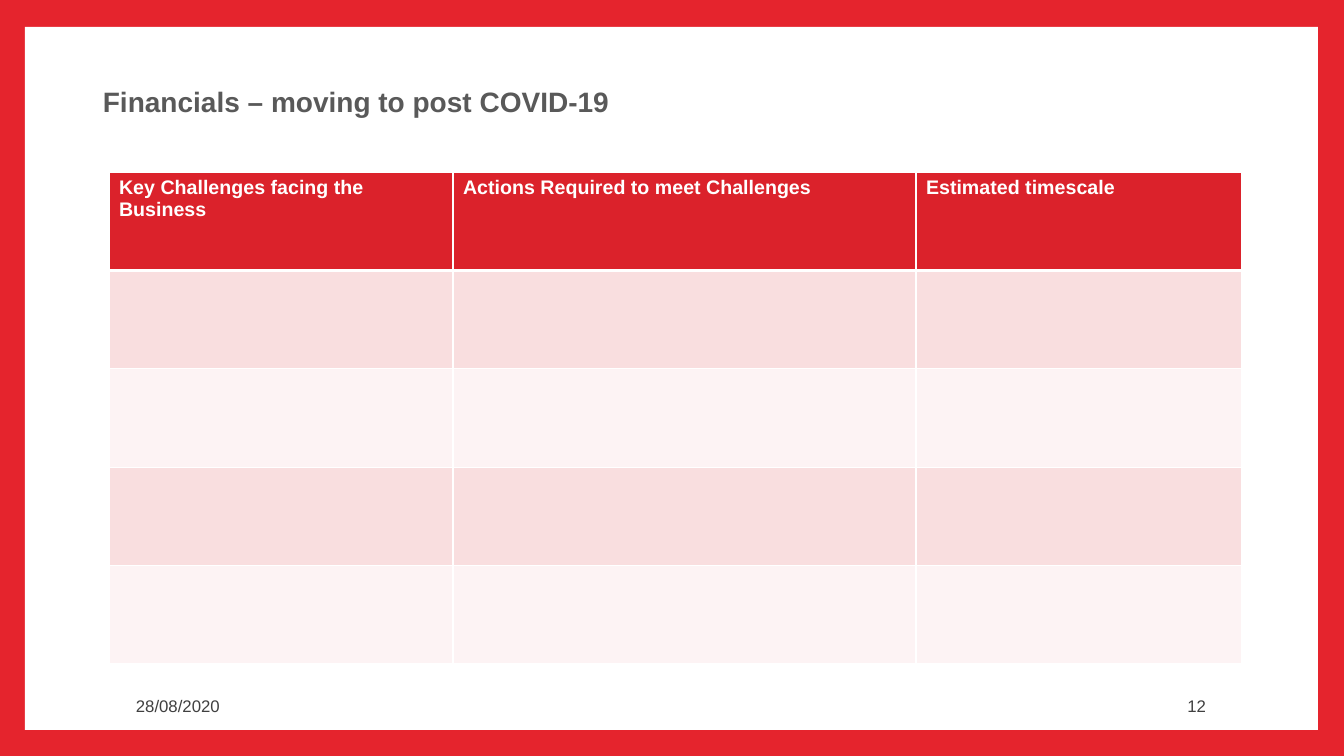
from lxml import etree
from pptx import Presentation
from pptx.dml.color import RGBColor
from pptx.enum.shapes import MSO_SHAPE
from pptx.enum.text import MSO_ANCHOR, PP_ALIGN
from pptx.oxml.ns import qn
from pptx.util import Pt

RECTANGLE = MSO_SHAPE.RECTANGLE
MIDDLE = MSO_ANCHOR.MIDDLE
LEFT, RIGHT = PP_ALIGN.LEFT, PP_ALIGN.RIGHT

FRAME_RED = RGBColor(0xE5, 0x24, 0x2D)
TABLE_RED = RGBColor(0xDB, 0x22, 0x2B)
WHITE = RGBColor(0xFF, 0xFF, 0xFF)
TITLE_GREY = RGBColor(0x59, 0x59, 0x59)
FOOTER_GREY = RGBColor(0x40, 0x40, 0x40)

EMU_PER_PX = 914400 / 100.8
BAND_OPACITY = (15, 5)  # percent, alternating down the body rows

TITLE_FORMAT = {"size": Pt(20), "bold": True, "color": TITLE_GREY}
HEADER_FORMAT = {"size": Pt(14), "bold": True, "color": WHITE}
FOOTER_FORMAT = {"size": Pt(12), "bold": False, "color": FOOTER_GREY}


def px(length):
    return round(length * EMU_PER_PX)


class SlideBuilder:
    font_name = "Arial"

    def __init__(self, slide):
        self.slide = slide

    def background(self, color):
        fill = self.slide.background.fill
        fill.solid()
        fill.fore_color.rgb = color

    def panel(self, box, color):
        panel = self.slide.shapes.add_shape(RECTANGLE, *map(px, box))
        panel.shadow.inherit = False
        panel.fill.solid()
        panel.fill.fore_color.rgb = color
        panel.line.fill.background()

    def styled_run(self, paragraph, text, text_format):
        run = paragraph.add_run()
        run.text = text
        run.font.name = self.font_name
        for attribute, value in text_format.items():
            if attribute == "color":
                run.font.color.rgb = value
            else:
                setattr(run.font, attribute, value)

    def text(self, box, text, text_format, align=LEFT, line_spacing=1.0):
        frame = self.slide.shapes.add_textbox(*map(px, box)).text_frame
        frame.word_wrap = True
        frame.vertical_anchor = MIDDLE
        paragraph = frame.paragraphs[0]
        paragraph.alignment = align
        paragraph.line_spacing = line_spacing
        self.styled_run(paragraph, text, text_format)

    def cell_style(self, cell, opacity, top, bottom):
        cell.fill.solid()
        cell.fill.fore_color.rgb = TABLE_RED
        properties = cell._tc.get_or_add_tcPr()
        if opacity < 100:
            color = properties.find(f"{qn('a:solidFill')}/{qn('a:srgbClr')}")
            etree.SubElement(color, qn("a:alpha"), val=str(opacity * 1000))
        # Borders come before the fill in the cell properties
        widths = {"a:lnL": 1, "a:lnR": 1, "a:lnT": top, "a:lnB": bottom}
        for position, (side, width) in enumerate(widths.items()):
            border = etree.Element(qn(side), w=str(Pt(width)))
            line_fill = etree.SubElement(border, qn("a:solidFill"))
            etree.SubElement(line_fill, qn("a:srgbClr"), val=str(WHITE))
            properties.insert(position, border)

    def table(self, box, column_widths, headings, row_count):
        table = self.slide.shapes.add_table(
            row_count, len(headings), *map(px, box)).table
        table.horz_banding = False
        for column, width in zip(table.columns, column_widths):
            column.width = px(width)
        for index, row in enumerate(table.rows):
            row.height = px(box[3] / row_count)
            opacity = BAND_OPACITY[(index - 1) % 2] if index else 100
            for cell in row.cells:
                self.cell_style(cell, opacity, top=3 if index == 1 else 1,
                                bottom=1 if index else 3)
        for cell, heading in zip(table.rows[0].cells, headings):
            self.styled_run(cell.text_frame.paragraphs[0], heading,
                            HEADER_FORMAT)


def main():
    presentation = Presentation()
    presentation.slide_width = px(1344)
    presentation.slide_height = px(756)
    blank_layout = presentation.slide_layouts[6]
    builder = SlideBuilder(presentation.slides.add_slide(blank_layout))

    # Red frame around a white page
    builder.background(FRAME_RED)
    builder.panel((25, 27, 1293, 703), WHITE)

    # Footer
    builder.text((126, 686, 257, 40), "28/08/2020", FOOTER_FORMAT)
    builder.text((1028, 686, 188, 40), "12", FOOTER_FORMAT, align=RIGHT)

    # Challenges table, with empty rows to fill in
    headings = ("Key Challenges facing the Business",
                "Actions Required to meet Challenges",
                "Estimated timescale")
    builder.table((109, 172, 1133, 492), (344, 463, 326), headings, 5)

    # Title
    builder.text((93, 67, 1089, 72), "Financials – moving to post COVID-19",
                 TITLE_FORMAT, line_spacing=0.9)

    presentation.save("out.pptx")


if __name__ == "__main__":
    main()
